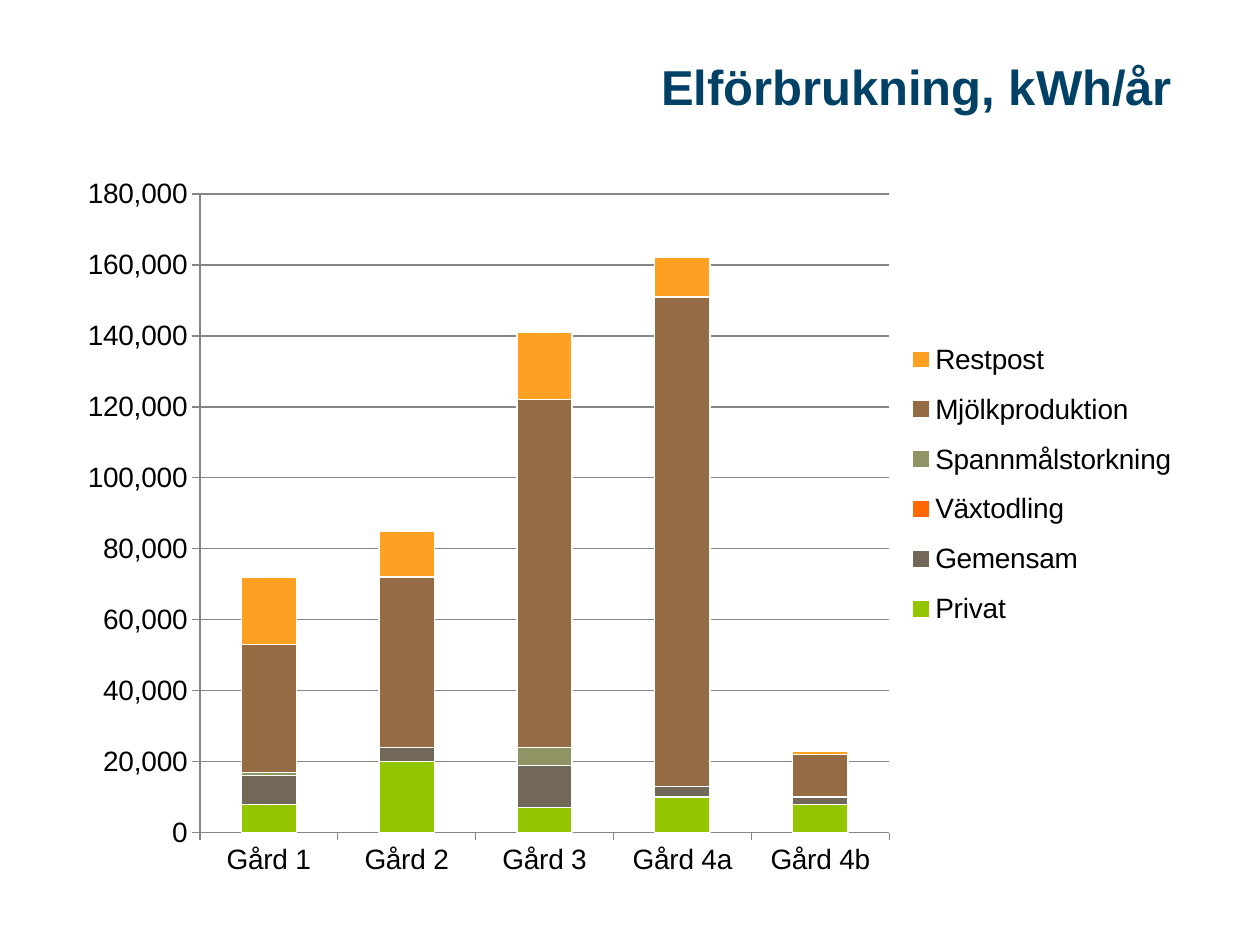
from lxml import etree
from pptx import Presentation
from pptx import util as u
from pptx.chart.data import CategoryChartData
from pptx.dml.color import RGBColor
from pptx.enum import chart as ch
from pptx.enum import text
from pptx.oxml import ns

COLORS = {
    "title": "004165", "text": "000000", "grid": "868686", "gap": "FFFFFF",
    "Privat": "94C600", "Gemensam": "71685A", "Växtodling": "FF6700",
    "Spannmålstorkning": "909465", "Mjölkproduktion": "956B43", "Restpost": "FEA022",
}
FONT = "Arial"
FARMS = ["Gård 1", "Gård 2", "Gård 3", "Gård 4a", "Gård 4b"]
CONSUMPTION = {
    "Privat": [8000, 20000, 7000, 10000, 8000],
    "Gemensam": [8000, 4000, 12000, 3000, 2000],
    "Växtodling": [0, 0, 0, 0, 0],
    "Spannmålstorkning": [1000, 0, 5000, 0, 0],
    "Mjölkproduktion": [36000, 48000, 98000, 138000, 12000],
    "Restpost": [19000, 13000, 19000, 11000, 1000],
}


def color(name):
    return RGBColor.from_string(COLORS[name])


def style_font(font, size, color_name, bold=False):
    font.name, font.size, font.bold = FONT, u.Pt(size), bold
    font.color.rgb = color(color_name)


def set_layout(parent, box, successor=None, inner=False):
    """Place a chart part at (x, y, w, h), as fractions of the chart."""
    for old in parent.findall(ns.qn("c:layout")):
        parent.remove(old)
    layout = etree.Element(ns.qn("c:layout"))
    manual = etree.SubElement(layout, ns.qn("c:manualLayout"))
    settings = [("layoutTarget", "inner")] if inner else []
    settings += [("xMode", "edge"), ("yMode", "edge"), *zip("xywh", box)]
    for tag, value in settings:
        etree.SubElement(manual, ns.qn(f"c:{tag}")).set("val", str(value))
    if successor is None:
        parent.insert(0, layout)
    else:
        successor.addprevious(layout)


def add_title(slide, left, top, width, height):
    shape = slide.shapes.add_textbox(left, top, width, height)
    frame = shape.text_frame
    frame.word_wrap = True
    frame.vertical_anchor = text.MSO_ANCHOR.MIDDLE
    paragraph = frame.paragraphs[0]
    paragraph.alignment = text.PP_ALIGN.RIGHT
    run = paragraph.add_run()
    run.text = "Elförbrukning, kWh/år"
    style_font(run.font, 28, "title", bold=True)


def style_axes(chart):
    for axis in (chart.category_axis, chart.value_axis):
        axis.major_tick_mark = ch.XL_TICK_MARK.OUTSIDE
        axis.minor_tick_mark = ch.XL_TICK_MARK.NONE
        axis.format.line.color.rgb = color("grid")
        axis.format.line.width = u.Pt(0.75)
        style_font(axis.tick_labels.font, 16, "text")
    values = chart.value_axis
    values.minimum_scale, values.maximum_scale, values.major_unit = 0, 180000, 20000
    values.has_major_gridlines = True
    values.major_gridlines.format.line.color.rgb = color("grid")
    values.major_gridlines.format.line.width = u.Pt(0.75)
    values.tick_labels.number_format = "#,##0"
    values.tick_labels.number_format_is_linked = False


def add_consumption_chart(slide, left, top, width, height):
    data = CategoryChartData(number_format="#,##0")
    data.categories = FARMS
    for name, values in CONSUMPTION.items():
        data.add_series(name, values)
    chart = slide.shapes.add_chart(
        ch.XL_CHART_TYPE.COLUMN_STACKED, left, top, width, height, data).chart
    style_font(chart.font, 16, "text")
    chart.has_title = False
    style_axes(chart)

    plot = chart.plots[0]
    plot.gap_width, plot.overlap, plot.vary_by_categories = 150, 100, False
    for series in plot.series:
        series.format.fill.solid()
        series.format.fill.fore_color.rgb = color(series.name)
        series.format.line.color.rgb = color("gap")
        series.format.line.width = u.Pt(0.75)

    chart.has_legend = True
    legend = chart.legend
    legend.position = ch.XL_LEGEND_POSITION.RIGHT
    legend.include_in_layout = False
    style_font(legend.font, 16, "text")
    legend_element = chart.element.find(".//" + ns.qn("c:legend"))
    set_layout(legend_element, (0.74, 0.22, 0.25, 0.44),
               legend_element.find(ns.qn("c:overlay")))
    set_layout(chart.element.find(".//" + ns.qn("c:plotArea")),
               (0.12, 0.04, 0.61, 0.88), inner=True)


def main():
    presentation = Presentation()
    presentation.slide_width, presentation.slide_height = u.Inches(10), u.Inches(7.5)
    slide = presentation.slides.add_slide(presentation.slide_layouts[6])
    add_title(slide, *map(u.Inches, (2.12, 0.39, 7.28, 0.59)))
    add_consumption_chart(slide, *map(u.Inches, (0.51, 1.31, 8.97, 5.76)))
    presentation.save("out.pptx")


if __name__ == "__main__":
    main()
